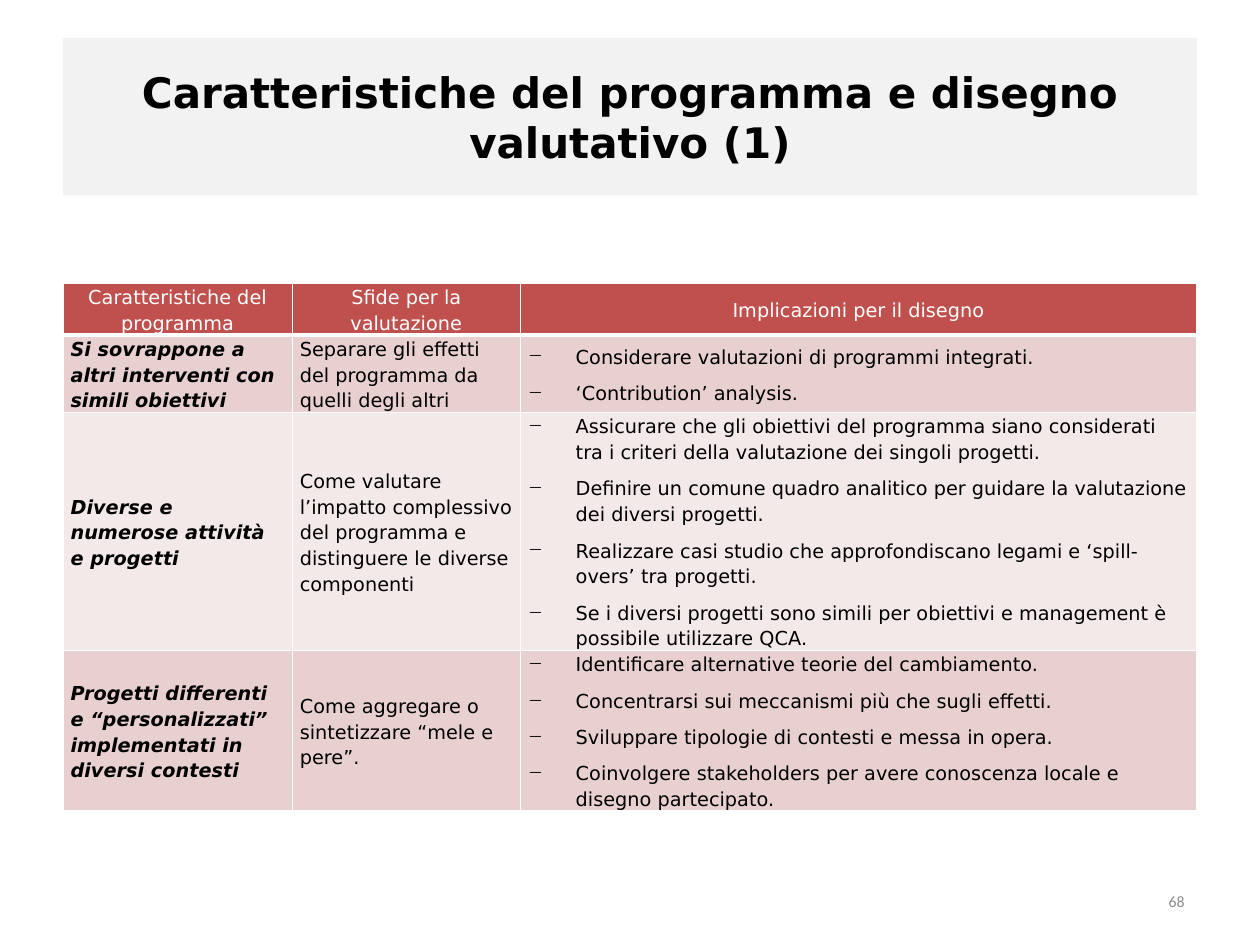
from lxml.etree import SubElement
from pptx import Presentation
from pptx.dml.color import RGBColor
from pptx.enum.shapes import MSO_SHAPE as Shape
from pptx.enum.text import MSO_ANCHOR as Anchor, PP_ALIGN as Align
from pptx.oxml.ns import qn
from pptx.util import Inches, Pt

WHITE = RGBColor(0xFF, 0xFF, 0xFF)
BLACK = RGBColor(0x00, 0x00, 0x00)
PALE_GRAY = RGBColor(0xF2, 0xF2, 0xF2)
GRAY = RGBColor(0x8C, 0x8C, 0x8C)
RED = RGBColor(0xC0, 0x50, 0x4D)
PINK = RGBColor(0xE8, 0xD0, 0xD0)
PALE_PINK = RGBColor(0xF4, 0xE9, 0xE9)
ROW_FILLS = [RED, PINK, PALE_PINK, PINK]

COLUMN_WIDTHS = [1.82, 1.81, 5.37]
ROW_HEIGHTS = [0.38, 0.58, 1.78, 1.17]
ROWS = [
    ["Caratteristiche del programma", "Sfide per la valutazione", "Implicazioni per il disegno"],
    [
        "Si sovrappone a altri interventi con simili obiettivi",
        "Separare gli effetti del programma da quelli degli altri",
        "Considerare valutazioni di programmi integrati.\n"
        "‘Contribution’ analysis.",
    ],
    [
        "Diverse e numerose attività e progetti",
        "Come valutare l’impatto complessivo del programma e distinguere le diverse componenti",
        "Assicurare che gli obiettivi del programma siano considerati tra i criteri della valutazione dei singoli progetti.\n"
        "Definire un comune quadro analitico per guidare la valutazione dei diversi progetti.\n"
        "Realizzare casi studio che approfondiscano legami e ‘spill-overs’ tra progetti.\n"
        "Se i diversi progetti sono simili per obiettivi e management è possibile utilizzare QCA.",
    ],
    [
        "Progetti differenti e “personalizzati” implementati in diversi contesti",
        "Come aggregare o sintetizzare “mele e pere”.",
        "Identificare alternative teorie del cambiamento.\n"
        "Concentrarsi sui meccanismi più che sugli effetti.\n"
        "Sviluppare tipologie di contesti e messa in opera.\n"
        "Coinvolgere stakeholders per avere conoscenza locale e disegno partecipato.",
    ],
]


def style_text(para, name, size, color, bold=False, italic=False):
    for span in para.runs:
        span.font.name = name
        span.font.size = Pt(size)
        span.font.color.rgb = color
        span.font.bold = bold
        span.font.italic = italic


def add_borders(cell, bottom_width):
    properties = cell._tc.get_or_add_tcPr()
    for side in ["lnL", "lnR", "lnT", "lnB"]:
        width = bottom_width if side == "lnB" else 1
        line = SubElement(properties, qn(f"a:{side}"), w=str(Pt(width)))
        fill = SubElement(line, qn("a:solidFill"))
        SubElement(fill, qn("a:srgbClr"), val=str(WHITE))


deck = Presentation()
deck.slide_width = Inches(10)
deck.slide_height = Inches(7.5)
page = deck.slides.add_slide(deck.slide_layouts[6])

title = page.shapes.add_shape(Shape.RECTANGLE, Inches(0.5), Inches(0.3), Inches(9), Inches(1.25))
title.shadow.inherit = False
title.fill.solid()
title.fill.fore_color.rgb = PALE_GRAY
title.line.fill.background()
title.text_frame.text = "Caratteristiche del programma e disegno valutativo (1)"
title.text_frame.vertical_anchor = Anchor.MIDDLE
title.text_frame.paragraphs[0].alignment = Align.CENTER
style_text(title.text_frame.paragraphs[0], "DejaVu Sans", 24, BLACK, bold=True)

table = page.shapes.add_table(
    len(ROWS), len(COLUMN_WIDTHS), Inches(0.5), Inches(2.25), Inches(9), Inches(sum(ROW_HEIGHTS))
).table
for column, width in zip(table.columns, COLUMN_WIDTHS):
    column.width = Inches(width)
for row, height in zip(table.rows, ROW_HEIGHTS):
    row.height = Inches(height)

for row_index, texts in enumerate(ROWS):
    is_header = row_index == 0
    for column_index, text in enumerate(texts):
        cell = table.cell(row_index, column_index)
        cell.text_frame.text = text
        cell.vertical_anchor = Anchor.MIDDLE
        cell.margin_left = cell.margin_right = Inches(0.06)
        cell.margin_top = cell.margin_bottom = 0
        add_borders(cell, 3 if is_header else 1)
        cell.fill.solid()
        cell.fill.fore_color.rgb = ROW_FILLS[row_index]
        is_label = not is_header and column_index == 0
        for para in cell.text_frame.paragraphs:
            para.alignment = Align.CENTER if is_header else Align.LEFT
            para.line_spacing = 1.15
            para.space_after = Pt(6)
            if not is_header and column_index == 2:
                properties = para._p.get_or_add_pPr()
                properties.set("marL", str(Inches(0.38)))
                properties.set("indent", str(-Inches(0.38)))
                SubElement(properties, qn("a:buChar"), char="−")
            style_text(para, "DejaVu Sans", 11, WHITE if is_header else BLACK, is_label, is_label)

number = page.shapes.add_textbox(Inches(7.17), Inches(6.95), Inches(2.33), Inches(0.4))
number.text_frame.word_wrap = True
number.text_frame.vertical_anchor = Anchor.MIDDLE
number.text_frame.text = "68"
number.text_frame.paragraphs[0].alignment = Align.RIGHT
style_text(number.text_frame.paragraphs[0], "Calibri", 9, GRAY)

deck.save("out.pptx")
